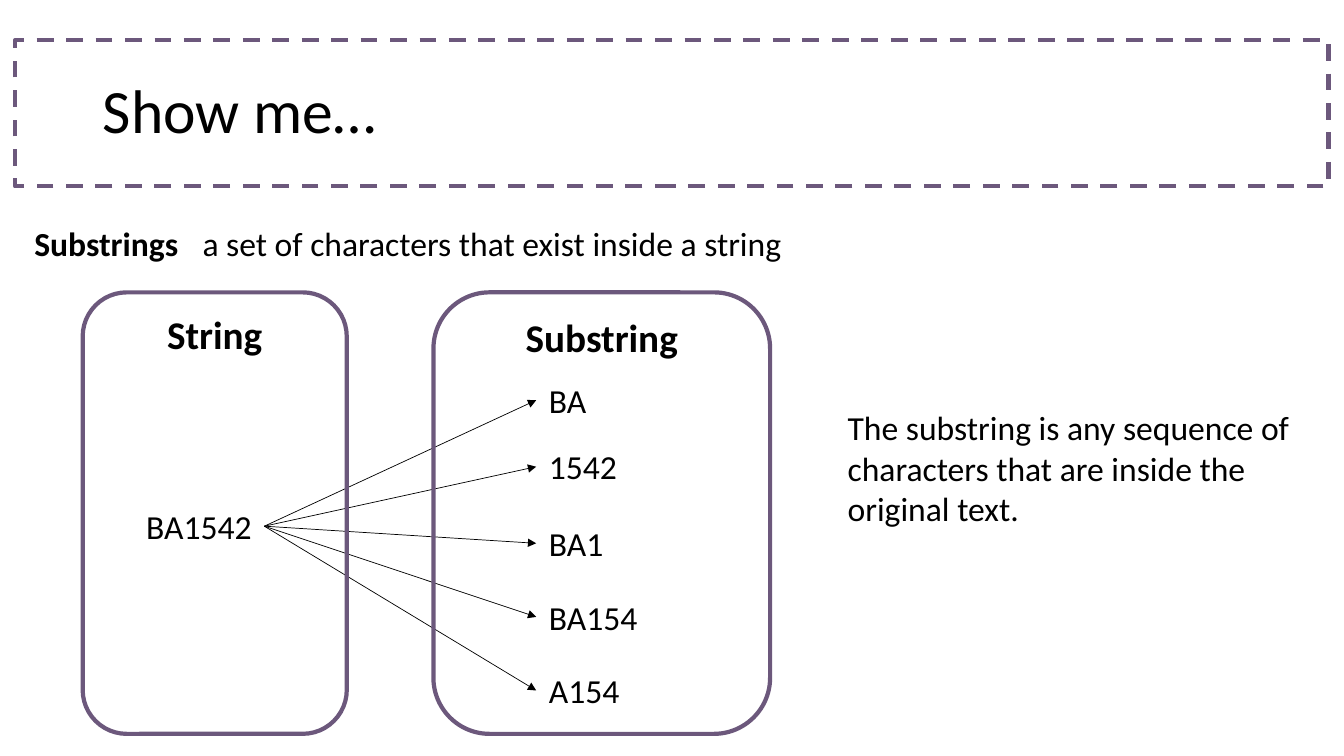
from dataclasses import dataclass

import pptx
import pptx.dml.color
import pptx.enum.dml
import pptx.enum.shapes
import pptx.enum.text
import pptx.oxml
import pptx.oxml.ns
import pptx.util

COLOURS = {"text": "000000", "paper": "FFFFFF", "frame": "6C587C"}
FONT = "Calibri"
ALIGN = pptx.enum.text.PP_ALIGN
ANCHOR = pptx.enum.text.MSO_ANCHOR
AUTO = pptx.enum.text.MSO_AUTO_SIZE
SHAPE = pptx.enum.shapes.MSO_SHAPE
WIDTH, HEIGHT = pptx.util.Inches(13.333), pptx.util.Inches(7.5)


@dataclass
class Area:
    """A rectangle in percent of the slide's width and height."""
    left: float
    top: float
    width: float
    height: float

    def emu(self):
        return (across(self.left), down(self.top),
                across(self.width), down(self.height))


@dataclass
class Group:
    heading: str
    area: Area


def across(share: float) -> int:
    return int(WIDTH * share / 100)


def down(share: float) -> int:
    return int(HEIGHT * share / 100)


def colour(name: str):
    return pptx.dml.color.RGBColor.from_string(COLOURS[name])


def write(frame, text: str, *, size=24, bold=False, align=ALIGN.LEFT,
          anchor=ANCHOR.TOP, spacing=1.0):
    frame.word_wrap = True
    frame.vertical_anchor = anchor
    paragraph = frame.paragraphs[0]
    paragraph.alignment = align
    paragraph.line_spacing = spacing
    run = paragraph.add_run()
    run.text = text
    run.font.name = FONT
    run.font.size = pptx.util.Pt(size)
    run.font.bold = bold
    run.font.color.rgb = colour("text")


def add_outline(slide, area: Area, preset, line: str, weight: float, fill=None):
    outline = slide.shapes.add_shape(preset, *area.emu())
    outline.shadow.inherit = False
    if fill:
        outline.fill.solid()
        outline.fill.fore_color.rgb = colour(fill)
    else:
        outline.fill.background()
    outline.line.color.rgb = colour(line)
    outline.line.width = pptx.util.Pt(weight)
    return outline


def add_value(slide, area: Area, text: str, align=ALIGN.LEFT, fill=None):
    value = add_outline(slide, area, SHAPE.ROUNDED_RECTANGLE, "paper", 1, fill)
    write(value.text_frame, text, align=align)
    return value


def add_arrow(slide, source, target):
    arrow = slide.shapes.add_connector(
        pptx.enum.shapes.MSO_CONNECTOR.STRAIGHT, 0, 0, 0, 0)
    arrow.begin_connect(source, 3)
    arrow.end_connect(target, 1)
    arrow.line.color.rgb = colour("text")
    arrow.line.width = pptx.util.Pt(0.5)
    namespace = pptx.oxml.ns.nsdecls("a")
    arrow.line._get_or_add_ln().append(
        pptx.oxml.parse_xml(f'<a:tailEnd {namespace} type="triangle"/>'))
    arrow._element.spPr.append(
        pptx.oxml.parse_xml(f"<a:effectLst {namespace}/>"))


def add_definition(slide, area: Area, term: str, meaning: str, term_width: float):
    table = slide.shapes.add_table(1, 2, *area.emu()).table
    table.first_row = table.horz_banding = False
    table.columns[0].width = across(term_width)
    table.columns[1].width = across(area.width - term_width)
    for cell, text, bold in zip(table.rows[0].cells, (term, meaning), (True, False)):
        cell.fill.background()
        write(cell.text_frame, text, bold=bold)
    table.cell(0, 0).vertical_anchor = ANCHOR.MIDDLE


# Content
BANNER = Area(1.12, 5.33, 97.73, 19.33)
TITLE = Area(6.9, BANNER.top, 86.25, BANNER.height)
DEFINITION = Area(1.8, 29.07, 89.85, 6.53)
SOURCE = Area(9.67, 65.87, 10.0, 7.47)
NOTE = Area(62.33, 53.2, 34.88, 17.47)
SUBSTRING_TOPS = {"BA": 49.2, "1542": 58.0, "BA1": 68.13,
                  "BA154": 77.87, "A154": 87.6}
GROUPS = [Group("String", Area(6.15, 38.67, 19.65, 58.4)),
          Group("Substring", Area(32.25, 38.67, 25.05, 58.4))]


def main():
    deck = pptx.Presentation()
    deck.slide_width, deck.slide_height = WIDTH, HEIGHT
    slide = deck.slides.add_slide(deck.slide_layouts[5])

    # Banner and title
    title = slide.shapes.title
    title.left, title.top, title.width, title.height = TITLE.emu()
    title.text_frame.auto_size = AUTO.NONE
    write(title.text_frame, "Show me…", size=44, anchor=ANCHOR.MIDDLE, spacing=0.9)
    banner = add_outline(slide, BANNER, SHAPE.RECTANGLE, "frame", 3)
    banner.line.dash_style = pptx.enum.dml.MSO_LINE.DASH

    # Definition
    add_definition(slide, DEFINITION, "Substrings",
                   "a set of characters that exist inside a string", 12.52)

    # String, its substrings and the arrows between them
    string = add_value(slide, SOURCE, "BA1542", ALIGN.RIGHT, "paper")
    substrings = [add_value(slide, Area(39.9, top, 17.4, SOURCE.height), text)
                  for text, top in SUBSTRING_TOPS.items()]
    for substring in substrings:
        add_arrow(slide, string, substring)

    # Frames around both groups
    for group in GROUPS:
        frame = add_outline(slide, group.area, SHAPE.ROUNDED_RECTANGLE, "frame", 3)
        write(frame.text_frame, group.heading, size=28, bold=True, align=ALIGN.CENTER)

    # Explanation
    note = slide.shapes.add_textbox(*NOTE.emu())
    write(note.text_frame, "The substring is any sequence of characters "
                           "that are inside the original text.")

    deck.save("out.pptx")


if __name__ == "__main__":
    main()
